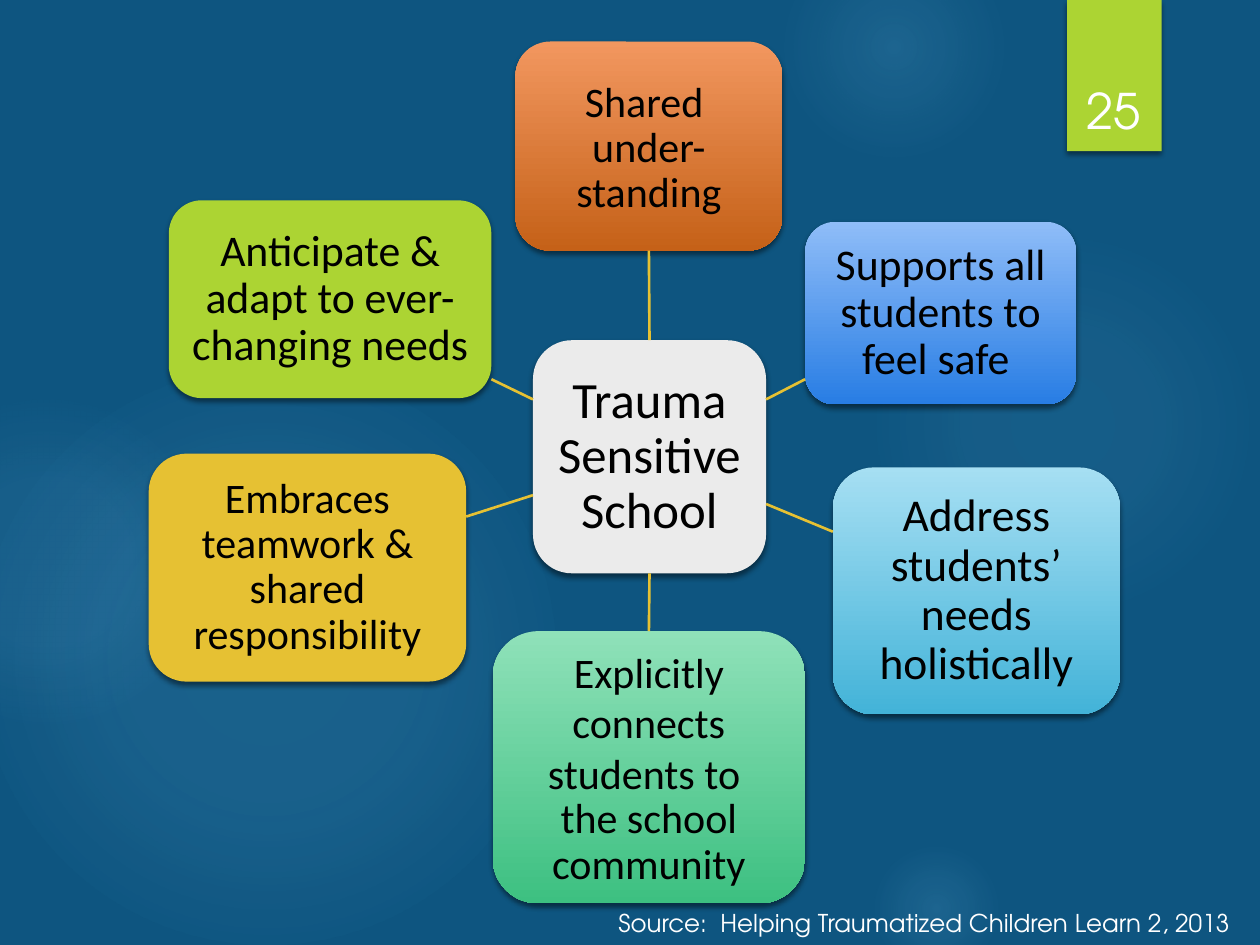
import lxml.etree
import pptx
import pptx.dml.color
import pptx.enum.shapes
import pptx.enum.text
import pptx.oxml
import pptx.oxml.ns
import pptx.util

Inches = pptx.util.Inches
Pt = pptx.util.Pt
RGBColor = pptx.dml.color.RGBColor
Shape = pptx.enum.shapes.MSO_SHAPE
Anchor = pptx.enum.text.MSO_ANCHOR
Align = pptx.enum.text.PP_ALIGN
qn = pptx.oxml.ns.qn

NAVY = RGBColor(0x0E, 0x55, 0x80)
SKY = RGBColor(0x7A, 0xC4, 0xF0)
LIME = RGBColor(0xAC, 0xD4, 0x33)
GOLD = RGBColor(0xE6, 0xC1, 0x33)
PALE = RGBColor(0xEB, 0xEB, 0xEB)
BLACK = RGBColor(0, 0, 0)
WHITE = RGBColor(0xFF, 0xFF, 0xFF)
ORANGE = (RGBColor(0xF2, 0x97, 0x5F), RGBColor(0xC5, 0x61, 0x18))
BLUE = (RGBColor(0x8F, 0xBD, 0xF8), RGBColor(0x28, 0x7D, 0xE4))
CYAN = (RGBColor(0xA6, 0xDF, 0xF3), RGBColor(0x43, 0xB3, 0xD8))
GREEN = (RGBColor(0x8F, 0xE1, 0xB9), RGBColor(0x3D, 0xC0, 0x81))

BODY = "Calibri"
HEAD = "TeX Gyre Adventor"

GLOWS = [
    ((6.89, 1.83, 3.08, 3.08), ((0, 7), (36, 6), (69, 0))),
    ((6.22, -0.5, 1.75, 1.75), ((0, 14), (36, 7), (73, 0))),
    ((6.89, 6.67, 1.08, 1.08), ((0, 14), (36, 7), (66, 0))),
    ((-0.17, 2.92, 4.58, 4.58), ((0, 11), (36, 10), (75, 0))),
    ((-0.92, 3.17, 2.58, 2.58), ((0, 8), (36, 8), (72, 0))),
]

HUB = (4.23, 2.7, 1.85, 1.85)
NODES = [
    ((4.09, 0.33, 2.12, 1.66), ORANGE, 24,
     [("Shared ", 1), ("under-standing", 0.9)], (5.15, 2.7, 5.15, 1.99), (0, 2)),
    ((6.39, 1.76, 2.15, 1.45), BLUE, 25,
     [("Supports all students to feel safe ", 0.9)], (6.08, 3.17, 6.39, 3.01), None),
    ((6.61, 3.71, 2.28, 1.96), CYAN, 26,
     [("Address students’ needs holistically", 0.9)], (6.08, 4, 6.61, 4.22), None),
    ((3.91, 5.01, 2.48, 2.16), GREEN, 24,
     [("Explicitly connects students to ", 1), ("the school community", 0.9)],
     (5.15, 4.55, 5.15, 5.01), (2, 0)),
    ((1.18, 3.6, 2.52, 1.81), GOLD, 24,
     [("Embraces teamwork & shared responsibility", 0.9)], (4.23, 3.93, 3.7, 4.1), None),
    ((1.34, 1.59, 2.56, 1.57), LIME, 25,
     [("Anticipate & adapt to ever-changing needs", 0.9)], (4.23, 3.17, 3.9, 3.01), None),
]


def inch(box):
    return [Inches(v) for v in box]


def add_form(slide, kind, box):
    form = slide.shapes.add_shape(kind, *inch(box))
    form.shadow.inherit = False
    form.line.fill.background()
    return form


def paint(form, fill):
    if isinstance(fill, RGBColor):
        form.fill.solid()
        form.fill.fore_color.rgb = fill
        return
    form.fill.gradient()
    form.fill.gradient_angle = 270
    for stop, tone, place in zip(form.fill.gradient_stops, fill, (0, 1)):
        stop.color.rgb = tone
        stop.position = place


def cast(form):
    list_ = form._element.spPr.find(qn("a:effectLst"))
    shade = lxml.etree.SubElement(
        list_, qn("a:outerShdw"), blurRad=str(Pt(3)), dist=str(Pt(2)),
        dir="5400000", algn="ctr", rotWithShape="0")
    tone = lxml.etree.SubElement(shade, qn("a:srgbClr"), val=str(BLACK))
    lxml.etree.SubElement(tone, qn("a:alpha"), val="45000")


def write(form, paras, size, font, color, align, anchor, pad):
    frame = form.text_frame
    frame.word_wrap = True
    frame.vertical_anchor = anchor
    (frame.margin_left, frame.margin_top,
     frame.margin_right, frame.margin_bottom) = inch(pad)
    for i, (text, space) in enumerate(paras):
        para = frame.add_paragraph() if i else frame.paragraphs[0]
        para.alignment = align
        para.line_spacing = space
        run = para.add_run()
        run.text = text
        run.font.size = Pt(size)
        run.font.name = font
        run.font.color.rgb = color


def add_glow(slide, box, stops):
    glow = add_form(slide, Shape.OVAL, box)
    glow.fill.gradient()
    marks = "".join(
        f'<a:gs pos="{at * 1000}"><a:srgbClr val="{SKY}">'
        f'<a:alpha val="{alpha * 1000}"/></a:srgbClr></a:gs>'
        for at, alpha in stops)
    blend = pptx.oxml.parse_xml(
        f'<a:gradFill {pptx.oxml.ns.nsdecls("a")} rotWithShape="1">'
        f'<a:gsLst>{marks}</a:gsLst><a:path path="circle">'
        '<a:fillToRect l="50000" t="50000" r="50000" b="50000"/>'
        '</a:path></a:gradFill>')
    props = glow._element.spPr
    props.replace(props.find(qn("a:gradFill")), blend)


def add_tag(slide, box):
    tag = add_form(slide, Shape.RECTANGLE, box)
    paint(tag, LIME)
    cast(tag)
    write(tag, [("25", 1)], 28, HEAD, WHITE, Align.CENTER, Anchor.BOTTOM,
          (0.1, 0.05, 0.12, 0.09))


def add_node(slide, box, fill, size, paras, pad=0.07):
    node = add_form(slide, Shape.ROUNDED_RECTANGLE, box)
    paint(node, fill)
    cast(node)
    write(node, paras, size, BODY, BLACK, Align.CENTER, Anchor.MIDDLE, [pad] * 4)
    return node


def add_spoke(slide, ends, hub, node, sites):
    spoke = slide.shapes.add_connector(
        pptx.enum.shapes.MSO_CONNECTOR.STRAIGHT, *inch(ends))
    spoke.line.color.rgb = GOLD
    spoke.line.width = Pt(1.5)
    lxml.etree.SubElement(spoke._element.spPr, qn("a:effectLst"))
    if sites:
        spoke.begin_connect(hub, sites[0])
        spoke.end_connect(node, sites[1])


def add_wheel(slide, box):
    hub = add_node(slide, box, PALE, 29, [("Trauma Sensitive School", 0.9)], 0.08)
    for place, fill, size, paras, ends, sites in NODES:
        node = add_node(slide, place, fill, size, paras)
        add_spoke(slide, ends, hub, node, sites)


def add_source(slide, box):
    note = slide.shapes.add_textbox(*inch(box))
    write(note, [("Source:  Helping Traumatized Children Learn 2, 2013", 1)],
          14, HEAD, WHITE, Align.LEFT, Anchor.TOP, (0.1, 0.05, 0.1, 0.05))


def main():
    deck = pptx.Presentation()
    deck.slide_width = Inches(10)
    deck.slide_height = Inches(7.5)
    slide = deck.slides.add_slide(deck.slide_layouts[6])
    slide.background.fill.solid()
    slide.background.fill.fore_color.rgb = NAVY
    for box, stops in GLOWS:
        add_glow(slide, box, stops)
    add_tag(slide, (8.47, 0, 0.75, 1.2))
    add_wheel(slide, HUB)
    add_source(slide, (4.81, 7.16, 5.19, 0.34))
    deck.save("out.pptx")


if __name__ == "__main__":
    main()
